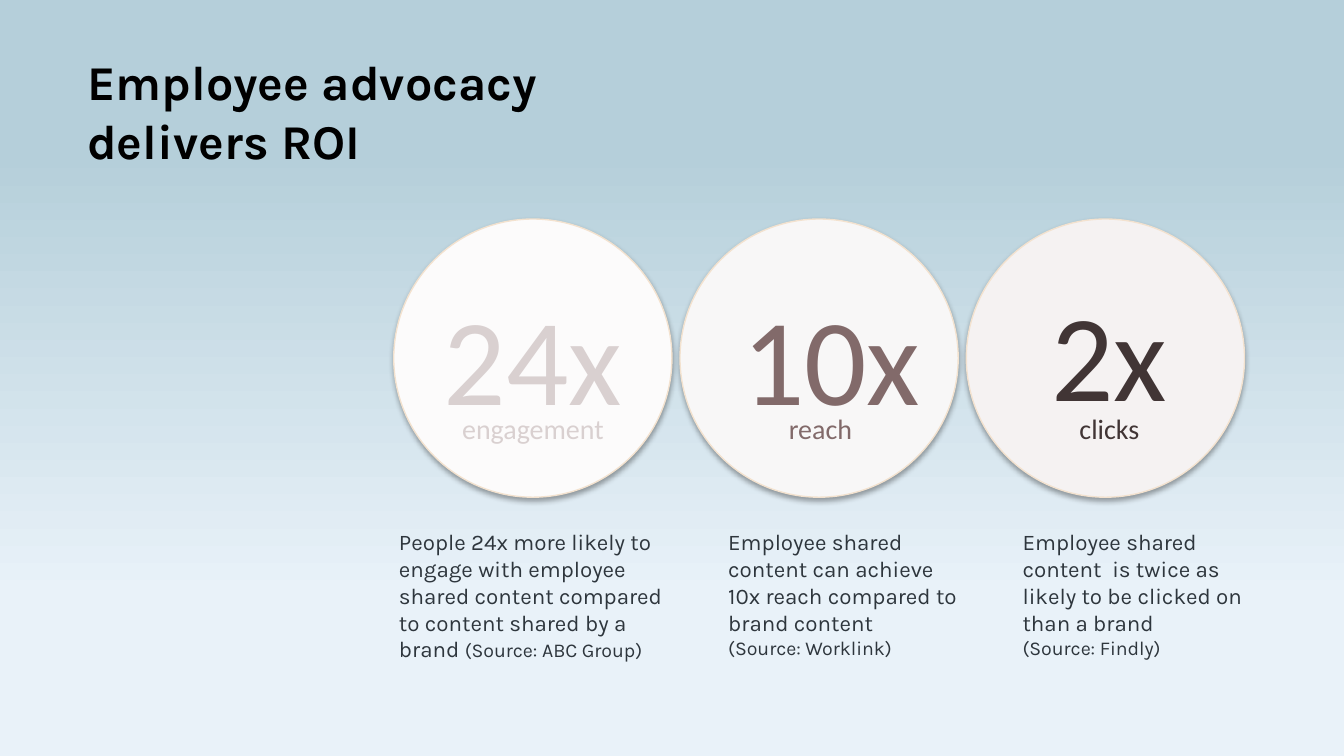
import pptx
import pptx.util
import pptx.oxml
import pptx.oxml.ns
import pptx.dml.color
import pptx.enum.shapes
import pptx.enum.text

Inches = pptx.util.Inches
Pt = pptx.util.Pt
RGBColor = pptx.dml.color.RGBColor
PP_ALIGN = pptx.enum.text.PP_ALIGN
NS = pptx.oxml.ns.nsdecls("a")

SKY = RGBColor(0xB5, 0xCF, 0xDA)
MIST = RGBColor(0xE9, 0xF2, 0xF9)
SAND = RGBColor(0xF3, 0xE2, 0xCF)
BLACK = RGBColor(0x00, 0x00, 0x00)
SLATE = RGBColor(0x2E, 0x36, 0x3D)
PALE = RGBColor(0xD9, 0xD0, 0xD0)
MAUVE = RGBColor(0x82, 0x6A, 0x6A)
DARK = RGBColor(0x41, 0x35, 0x35)
DISC_1 = RGBColor(0xFC, 0xFB, 0xFB)
DISC_2 = RGBColor(0xF8, 0xF7, 0xF7)
DISC_3 = RGBColor(0xF5, 0xF2, 0xF2)


def add_text(s, box, paragraphs, fmt, align=PP_ALIGN.LEFT):
    tf = s.shapes.add_textbox(*[Inches(v) for v in box]).text_frame
    tf.word_wrap = True
    for i, runs in enumerate(paragraphs):
        p = tf.add_paragraph() if i else tf.paragraphs[0]
        p.alignment = align
        for text, size, color in runs:
            r = p.add_run()
            r.text = text
            r.font.color.rgb = color
            for name, value in {**fmt, "size": Pt(size)}.items():
                setattr(r.font, name, value)


prs = pptx.Presentation()
prs.slide_width = Inches(10)
prs.slide_height = Inches(10 * 9 / 16)
s = prs.slides.add_slide(prs.slide_layouts[6])

fill = s.background.fill
fill.gradient()
fill.gradient_angle = 270
gs_lst = s.background._cSld.find(".//" + pptx.oxml.ns.qn("a:gsLst"))
for gs in list(gs_lst):
    gs_lst.remove(gs)
for pos, color in [(0, SKY), (20, SKY), (79, MIST), (100, MIST)]:
    gs_lst.append(pptx.oxml.parse_xml(
        f'<a:gs {NS} pos="{pos * 1000}"><a:srgbClr val="{color}"/></a:gs>'))

for i, color in enumerate([DISC_1, DISC_2, DISC_3]):
    disc = s.shapes.add_shape(pptx.enum.shapes.MSO_SHAPE.OVAL, Inches(2.93 + 2.13 * i),
                              Inches(1.63), Inches(2.07), Inches(2.07))
    disc.fill.solid()
    disc.fill.fore_color.rgb = color
    disc.line.color.rgb = SAND
    disc.line.width = Pt(0.75)
    disc.shadow.inherit = False
    effects = disc._element.spPr.find(pptx.oxml.ns.qn("a:effectLst"))
    effects.append(pptx.oxml.parse_xml(
        f'<a:outerShdw {NS} blurRad="{Pt(3.1)}" dist="{Pt(1.8)}" dir="5400000" rotWithShape="0">'
        f'<a:srgbClr val="{BLACK}"><a:alpha val="35000"/></a:srgbClr></a:outerShdw>'))

stats = [
    ("24x", 3.09, 2.05, "engagement", 3.09, PALE),
    ("10x", 5.31, 2.05, "reach", 5.23, MAUVE),
    ("2x", 7.38, 2.02, "clicks", 7.38, DARK),
]
calibri = {"name": "Calibri"}
for number, x, y, label, label_x, color in stats:
    add_text(s, (x, y, 1.75, 1.3), [[(number, 66, color)]], calibri, PP_ALIGN.CENTER)
    add_text(s, (label_x, 3.01, 1.75, 0.48), [[(label, 15, color)]], calibri,
             PP_ALIGN.CENTER)

notes = [
    (2.87, 2.19, [[("People 24x more likely to engage with employee shared content "
                    "compared to content shared by a brand ", 12, SLATE),
                   ("(Source: ABC Group)", 10.5, SLATE)]]),
    (5.32, 1.96, [[("Employee shared content can achieve 10x reach compared to "
                    "brand content", 12, SLATE)],
                  [("(Source: Worklink)", 10.5, SLATE)]]),
    (7.51, 1.91, [[("Employee shared content  is twice as likely to be clicked on "
                    "than a brand", 12, SLATE)],
                  [("(Source: Findly)", 10.5, SLATE)]]),
]
for x, width, paragraphs in notes:
    add_text(s, (x, 3.88, width, 1.11), paragraphs, {"name": "Karla"})

add_text(s, (0.55, 0.34, 4.02, 0.98), [[("Employee advocacy delivers ROI", 26, BLACK)]],
         {"name": "Karla", "bold": True})

prs.save("out.pptx")
